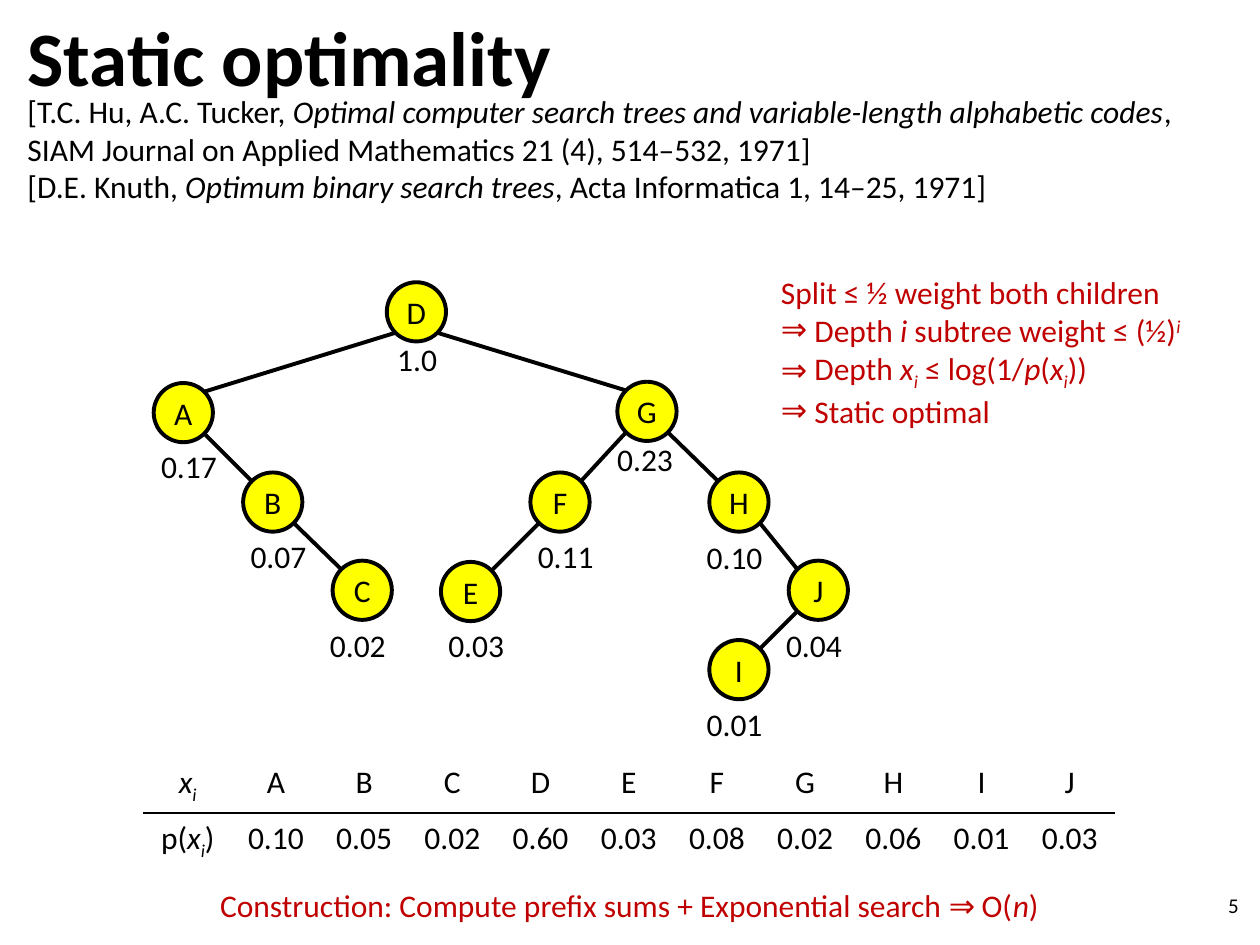
from dataclasses import dataclass
from math import copysign, sqrt
from typing import NamedTuple

from lxml import etree
from pptx import Presentation
from pptx import util as u
from pptx.dml import color
from pptx.enum import shapes, text
from pptx.oxml import ns

COLOURS = {"ink": "000000", "accent": "C00000", "node": "FFFF00"}
FONT = "Calibri"
LEFT, CENTRE, RIGHT = text.PP_ALIGN.LEFT, text.PP_ALIGN.CENTER, text.PP_ALIGN.RIGHT
COLUMNS, ROWS = 100, 75
RADIUS = 2.35
TABLE_COLUMN = 7

deck = Presentation()
deck.slide_width, deck.slide_height = u.Inches(10), u.Inches(7.5)
slide = deck.slides.add_slide(deck.slide_layouts[6])


class Run(NamedTuple):
    words: str
    italic: bool = False
    baseline: int = 0


@dataclass
class Line:
    runs: list[Run]
    bullet: str = ""


@dataclass
class Node:
    key: str
    column: float
    row: float
    weight: str
    weight_shift: float
    weight_drop: float
    parent: str = ""


def x(columns: float) -> int:
    return round(deck.slide_width * columns / COLUMNS)


def y(rows: float) -> int:
    return round(deck.slide_height * rows / ROWS)


def rgb(name: str) -> color.RGBColor:
    return color.RGBColor.from_string(COLOURS[name])


def write(frame, lines: list[Line], size: float = 18, ink: str = "ink",
          align=LEFT, bold: bool = False) -> None:
    for index, line in enumerate(lines):
        paragraph = frame.add_paragraph() if index else frame.paragraphs[0]
        paragraph.alignment = align
        if line.bullet:
            properties = paragraph._p.get_or_add_pPr()
            etree.SubElement(properties, ns.qn("a:buFont")).set("typeface", FONT)
            etree.SubElement(properties, ns.qn("a:buChar")).set("char", line.bullet)
        for part in line.runs:
            run = paragraph.add_run()
            run.text = part.words
            font = run.font
            font.name, font.size = FONT, u.Pt(size)
            font.bold, font.italic = bold, part.italic
            font.color.rgb = rgb(ink)
            if part.baseline:
                font._element.set("baseline", str(part.baseline * 1000))


def add_text(column: float, row: float, width: float, height: float,
             lines: list[Line], anchor=text.MSO_ANCHOR.TOP, **style) -> None:
    frame = slide.shapes.add_textbox(x(column), y(row), x(width), y(height)).text_frame
    frame.word_wrap = True
    frame.vertical_anchor = anchor
    write(frame, lines, **style)


def add_node(node: Node) -> None:
    circle = slide.shapes.add_shape(
        shapes.MSO_SHAPE.OVAL, x(node.column - RADIUS), y(node.row - RADIUS),
        x(2 * RADIUS), y(2 * RADIUS))
    circle.shadow.inherit = False
    circle.fill.solid()
    circle.fill.fore_color.rgb = rgb("node")
    circle.line.color.rgb = rgb("ink")
    circle.line.width = u.Pt(2.25)
    circle.text_frame.word_wrap = False
    circle.text_frame.vertical_anchor = text.MSO_ANCHOR.MIDDLE
    write(circle.text_frame, [Line([Run(node.key)])], align=CENTRE)
    add_text(node.column + node.weight_shift - 6.7, node.row + node.weight_drop,
             13.4, 4, [Line([Run(node.weight)])], align=CENTRE)


def add_edge(parent: Node, child: Node) -> None:
    reach = RADIUS / sqrt(2)
    side = copysign(reach, child.column - parent.column)
    edge = slide.shapes.add_connector(
        shapes.MSO_CONNECTOR.STRAIGHT,
        x(parent.column + side), y(parent.row + reach),
        x(child.column - side), y(child.row - reach))
    edge.line.color.rgb = rgb("ink")
    edge.line.width = u.Pt(2.25)
    etree.SubElement(edge._element.spPr, ns.qn("a:effectLst"))


def add_rule(cell, side: str) -> None:
    rule = etree.Element(ns.qn(f"a:{side}"), w=str(u.Pt(1)))
    fill = etree.SubElement(rule, ns.qn("a:solidFill"))
    etree.SubElement(fill, ns.qn("a:srgbClr")).set("val", COLOURS["ink"])
    cell._tc.get_or_add_tcPr().insert(0, rule)


def add_probabilities(rows: list[list[list[Run]]]) -> None:
    count = len(rows[0])
    table = slide.shapes.add_table(
        len(rows), count, x(11.4), y(60.1), x(TABLE_COLUMN * count), y(8.1)).table
    table.first_row = table.horz_banding = False
    for column in table.columns:
        column.width = x(TABLE_COLUMN)
    for r, (row, side) in enumerate(zip(rows, ("lnB", "lnT"))):
        for c, runs in enumerate(row):
            cell = table.cell(r, c)
            cell.fill.background()
            add_rule(cell, side)
            write(cell.text_frame, [Line(runs)], align=CENTRE)


X_I = [Run("x", True), Run("i", True, -25)]

CITATIONS = [
    Line([Run("[T.C. Hu, A.C. Tucker, "),
          Run("Optimal computer search trees and variable-length alphabetic codes", True),
          Run(", SIAM Journal on Applied Mathematics 21 (4), 514–532, 1971]")]),
    Line([Run("[D.E. Knuth, "), Run("Optimum binary search trees", True),
          Run(", Acta Informatica 1, 14–25, 1971]")]),
]

ARGUMENT = [
    Line([Run("Split ≤ ½ weight both children")]),
    Line([Run(" Depth "), Run("i ", True), Run("subtree weight ≤ (½)"),
          Run("i", True, 30)], "⇒"),
    Line([Run(" Depth "), *X_I, Run(" ≤ log(1/"), Run("p", True), Run("("), *X_I,
          Run("))")], "⇒"),
    Line([Run(" Static optimal")], "⇒"),
]

CONSTRUCTION = [Line([
    Run("Construction: Compute prefix sums + Exponential search ⇒ O("),
    Run("n", True), Run(")")])]

TREE = [
    Node("D", 33.05, 24.75, "1.0", 0.05, 1.75),
    Node("A", 14.55, 32.75, "0.17", 0.45, 2.25, "D"),
    Node("G", 51.35, 32.65, "0.23", -0.15, 1.75, "D"),
    Node("B", 21.65, 39.85, "0.07", 0.45, 2.25, "A"),
    Node("C", 28.75, 46.85, "0.02", -0.35, 2.35, "B"),
    Node("F", 44.45, 39.85, "0.11", 0.45, 2.25, "G"),
    Node("E", 37.35, 46.95, "0.03", 0.45, 2.25, "F"),
    Node("H", 58.65, 39.85, "0.10", -0.35, 2.35, "G"),
    Node("J", 64.95, 46.85, "0.04", -0.35, 2.35, "H"),
    Node("I", 58.65, 53.15, "0.01", -0.35, 2.35, "J"),
]

PROBABILITIES = {
    "A": "0.10", "B": "0.05", "C": "0.02", "D": "0.60", "E": "0.03",
    "F": "0.08", "G": "0.02", "H": "0.06", "I": "0.01", "J": "0.03",
}


def main() -> None:
    add_text(1.2, 6.8, 95, 11, CITATIONS)
    add_text(76, 69.8, 23.3, 4, [Line([Run("5")])], text.MSO_ANCHOR.MIDDLE,
             size=12, align=RIGHT)
    add_text(1.2, -0.3, 90, 9.4, [Line([Run("Static optimality")])],
             text.MSO_ANCHOR.MIDDLE, size=44, bold=True)
    add_probabilities([
        [X_I, *([Run(key)] for key in PROBABILITIES)],
        [[Run("p("), *X_I, Run(")")], *([Run(p)] for p in PROBABILITIES.values())],
    ])
    nodes = {node.key: node for node in TREE}
    for node in TREE:
        add_node(node)
        if node.parent:
            add_edge(nodes[node.parent], node)
    add_text(61, 21.2, 35.4, 13.1, ARGUMENT, ink="accent")
    add_text(10.6, 69.8, 78.7, 4, CONSTRUCTION, ink="accent", align=CENTRE)
    deck.save("out.pptx")


if __name__ == "__main__":
    main()
